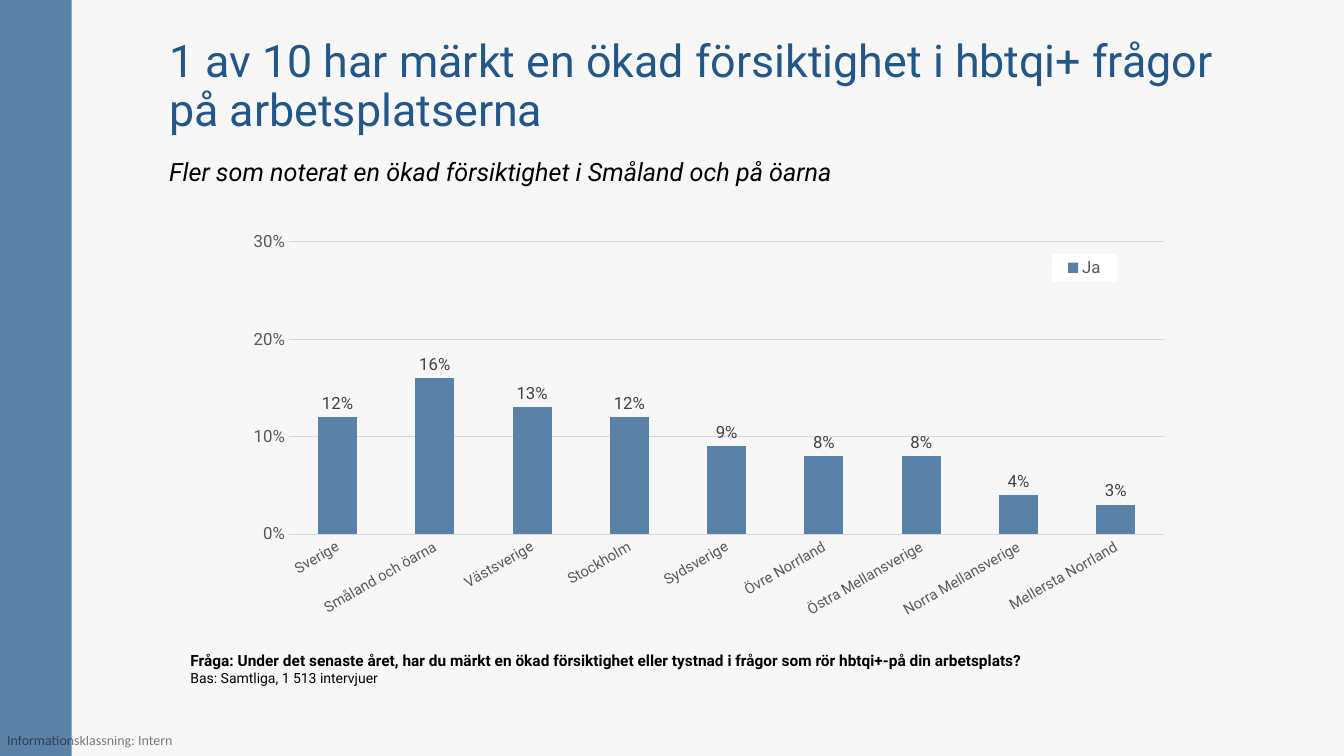
from lxml import etree
from pptx import Presentation
from pptx.chart.data import CategoryChartData
from pptx.dml.color import RGBColor
from pptx.enum.chart import XL_CHART_TYPE, XL_LABEL_POSITION, XL_LEGEND_POSITION, XL_TICK_MARK
from pptx.enum.shapes import MSO_SHAPE
from pptx.enum.text import MSO_ANCHOR
from pptx.oxml import parse_xml
from pptx.oxml.ns import nsdecls, qn
from pptx.util import Inches, Pt

COLUMN = XL_CHART_TYPE.COLUMN_CLUSTERED
OUTSIDE_END = XL_LABEL_POSITION.OUTSIDE_END
LEGEND_BOTTOM = XL_LEGEND_POSITION.BOTTOM
NO_TICK = XL_TICK_MARK.NONE
RECTANGLE = MSO_SHAPE.RECTANGLE
TOP, MIDDLE = MSO_ANCHOR.TOP, MSO_ANCHOR.MIDDLE

BACKGROUND = RGBColor(0xF7, 0xF7, 0xF7)
STEEL = RGBColor(0x5A, 0x81, 0xA7)
NAVY = RGBColor(0x23, 0x57, 0x89)
BLACK = RGBColor(0, 0, 0)
LABEL = RGBColor(0x40, 0x40, 0x40)
AXIS = RGBColor(0x59, 0x59, 0x59)
GRID = RGBColor(0xD9, 0xD9, 0xD9)

SHARES = {
    "Sverige": 0.12,
    "Småland och öarna": 0.16,
    "Västsverige": 0.13,
    "Stockholm": 0.12,
    "Sydsverige": 0.09,
    "Övre Norrland": 0.08,
    "Östra Mellansverige": 0.08,
    "Norra Mellansverige": 0.04,
    "Mellersta Norrland": 0.03,
}


def manual_layout(x, y, w, h, inner=False):
    """Chart layout element, in fractions of the chart's size."""
    target = '<c:layoutTarget val="inner"/>' if inner else ""
    return parse_xml(
        f'<c:layout {nsdecls("c")}><c:manualLayout>{target}'
        '<c:xMode val="edge"/><c:yMode val="edge"/>'
        f'<c:x val="{x}"/><c:y val="{y}"/><c:w val="{w}"/><c:h val="{h}"/>'
        '</c:manualLayout></c:layout>')


class SlideBuilder:
    font = "Roboto"

    def __init__(self, prs):
        self.s = prs.slides.add_slide(prs.slide_layouts[6])
        fill = self.s.background.fill
        fill.solid()
        fill.fore_color.rgb = BACKGROUND

    def style(self, font, size, color, bold=False, italic=False, name=None):
        font.name = name or self.font
        font.size = Pt(size)
        font.bold, font.italic = bold, italic
        font.color.rgb = color

    def band(self, x, y, w, h, color):
        sp = self.s.shapes.add_shape(RECTANGLE, Inches(x), Inches(y), Inches(w), Inches(h))
        sp.shadow.inherit = False
        sp.fill.solid()
        sp.fill.fore_color.rgb = color
        sp.line.fill.background()

    def text(self, x, y, w, h, lines, anchor=TOP, spacing=None, inset=None):
        """Add a text box; each line is (text, style keywords)."""
        sp = self.s.shapes.add_textbox(Inches(x), Inches(y), Inches(w), Inches(h))
        tf = sp.text_frame
        tf.word_wrap = True
        tf.vertical_anchor = anchor
        if inset is not None:
            tf.margin_left = tf.margin_right = Inches(inset)
            tf.margin_top = tf.margin_bottom = Inches(inset)
        tf.text = "\n".join(line for line, _ in lines)
        for p, (_, look) in zip(tf.paragraphs, lines):
            p.line_spacing = spacing
            self.style(p.runs[0].font, **look)
        return tf

    def column_chart(self, x, y, w, h, name, shares):
        data = CategoryChartData(number_format="0%")
        data.categories = list(shares)
        data.add_series(name, list(shares.values()))
        chart = self.s.shapes.add_chart(
            COLUMN, Inches(x), Inches(y), Inches(w), Inches(h), data).chart
        chart.has_title = False
        self.style(chart.font, 10, BLACK)

        plot = chart.plots[0]
        plot.vary_by_categories = False
        plot.gap_width, plot.overlap = 150, -23
        fill = plot.series[0].format.fill
        fill.solid()
        fill.fore_color.rgb = STEEL
        plot.has_data_labels = True
        labels = plot.data_labels
        labels.show_value = True
        labels.position = OUTSIDE_END
        labels.number_format, labels.number_format_is_linked = "0%", False
        self.style(labels.font, 12, LABEL)

        self.axes(chart)
        self.legend(chart)
        area = chart.element.xpath("//c:plotArea")[0]
        for layout in area.findall(qn("c:layout")):
            area.remove(layout)
        area.insert(0, manual_layout(0.063, 0.046, 0.919, 0.67, inner=True))

    def axes(self, chart):
        cat, val = chart.category_axis, chart.value_axis
        for axis, size in ((cat, 10.5), (val, 12)):
            axis.major_tick_mark = axis.minor_tick_mark = NO_TICK
            self.style(axis.tick_labels.font, size, AXIS)
        val.minimum_scale, val.maximum_scale, val.major_unit = 0, 0.3, 0.1
        val.tick_labels.number_format = "0%"
        val.tick_labels.number_format_is_linked = False
        val.format.line.fill.background()
        for line in (cat.format.line, val.major_gridlines.format.line):
            line.color.rgb = GRID
            line.width = Pt(0.75)
        body = chart.element.xpath("//c:catAx/c:txPr/a:bodyPr")[0]
        body.set("rot", str(-30 * 60000))
        body.set("vert", "horz")

    def legend(self, chart):
        chart.has_legend = True
        legend = chart.legend
        legend.position = LEGEND_BOTTOM
        legend.include_in_layout = False
        chart.element.xpath("//c:legend/c:legendPos")[0].addnext(
            manual_layout(0.864, 0.074, 0.068, 0.063))
        chart.element.xpath("//c:legend/c:overlay")[0].addnext(parse_xml(
            f'<c:spPr {nsdecls("c", "a")}><a:solidFill><a:srgbClr val="FFFFFF"/>'
            '</a:solidFill><a:ln><a:noFill/></a:ln></c:spPr>'))
        self.style(legend.font, 12, AXIS)


def main():
    prs = Presentation()
    prs.slide_width, prs.slide_height = Inches(13.33), Inches(7.5)
    slide = SlideBuilder(prs)
    slide.band(0, 0, 0.71, 7.5, STEEL)
    marking = slide.text(
        0.07, 7.26, 1.75, 0.17,
        [("Informationsklassning: Intern", dict(size=10, color=BLACK, name="Calibri"))],
        inset=0)
    color = marking.paragraphs[0].runs[0].font.fill.fore_color
    color.rgb = BLACK
    for clr in marking.paragraphs[0].runs[0].font.fill and \
            marking.paragraphs[0].runs[0]._r.iter(qn("a:srgbClr")):
        etree.SubElement(clr, qn("a:alpha")).set("val", "50000")

    slide.column_chart(2.27, 2.2, 9.45, 4.33, "Ja", SHARES)
    slide.text(
        1.58, 0.39, 10.84, 0.96,
        [("1 av 10 har märkt en ökad försiktighet i hbtqi+ frågor på arbetsplatserna",
          dict(size=32, color=NAVY))],
        anchor=MIDDLE, spacing=0.9)
    slide.text(
        1.58, 1.5, 10.84, 0.4,
        [("Fler som noterat en ökad försiktighet i Småland och på öarna",
          dict(size=18, color=BLACK, italic=True))],
        anchor=MIDDLE)
    slide.text(
        1.79, 6.41, 9.45, 0.69,
        [("Fråga: Under det senaste året, har du märkt en ökad försiktighet eller tystnad "
          "i frågor som rör hbtqi+-på din arbetsplats?",
          dict(size=11, color=BLACK, bold=True)),
         ("Bas: Samtliga, 1 513 intervjuer", dict(size=10, color=BLACK))])
    prs.save("out.pptx")


if __name__ == "__main__":
    main()
